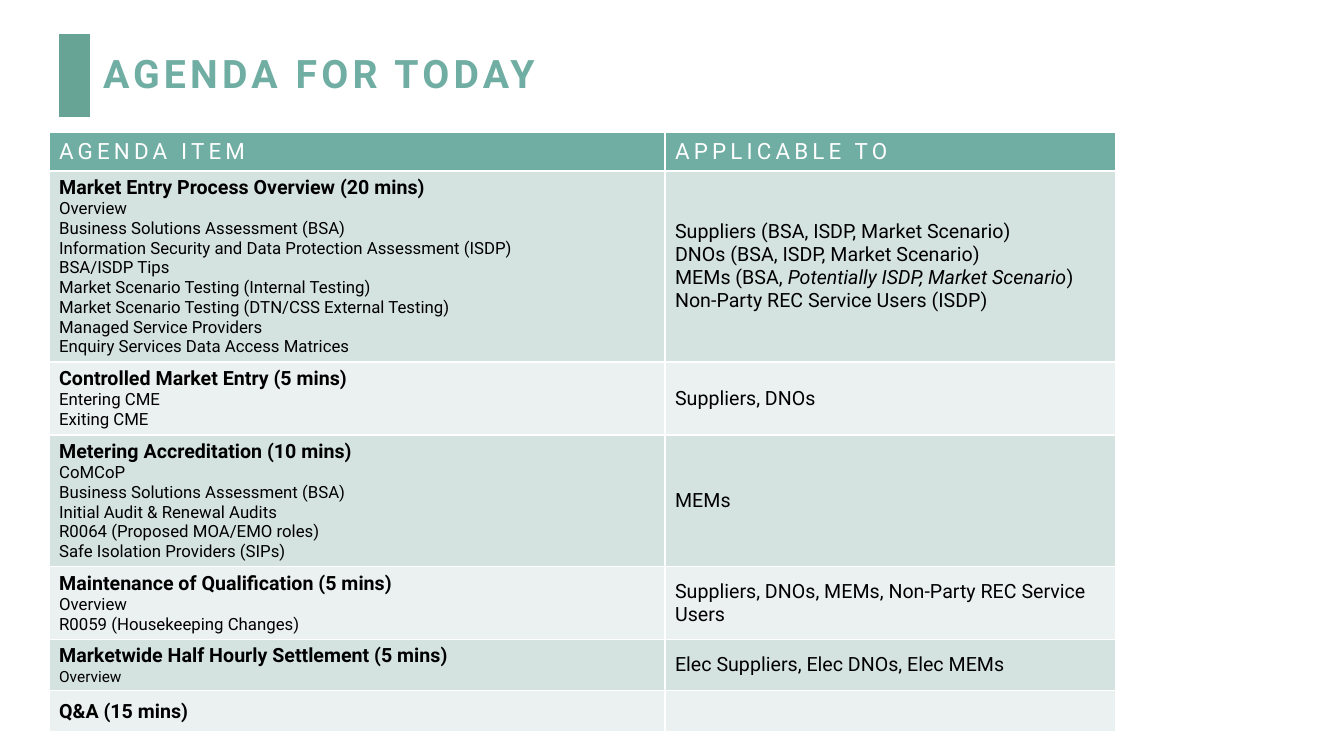
from lxml import etree
from pptx import Presentation
from pptx import util as u
from pptx.dml.color import RGBColor
from pptx.enum import shapes, text
from pptx.oxml import ns

SLIDE_W, SLIDE_H = 1344, 756
SCALE = u.Inches(7.5) / SLIDE_H

TEAL = RGBColor(0x70, 0xAD, 0xA3)
DEEP_TEAL = RGBColor(0x68, 0xA4, 0x95)
BAND_DARK = RGBColor(0xD5, 0xE3, 0xE0)
BAND_LIGHT = RGBColor(0xEB, 0xF1, 0xF0)
WHITE = RGBColor(0xFF, 0xFF, 0xFF)
BLACK = RGBColor(0x00, 0x00, 0x00)

TITLE = {"size": 28, "bold": True, "color": TEAL, "spacing": 3}
HEADER = {"size": 16, "bold": False, "color": WHITE, "spacing": 3}
ITEM = {"size": 14, "bold": True, "color": BLACK}
TOPIC = {"size": 12, "bold": False, "color": BLACK}
SMALL_TOPIC = {**TOPIC, "size": 11}
AUDIENCE = {"size": 14, "bold": False, "color": BLACK}

HEADINGS = ["AGENDA ITEM", "APPLICABLE TO"]
COLUMN_WIDTHS = [616, 451]
HEADER_HEIGHT = 39
AGENDA = [
    (191, "Market Entry Process Overview (20 mins)", TOPIC,
     ["Overview",
      "Business Solutions Assessment (BSA)",
      "Information Security and Data Protection Assessment (ISDP)",
      "BSA/ISDP Tips",
      "Market Scenario Testing (Internal Testing)",
      "Market Scenario Testing (DTN/CSS External Testing)",
      "Managed Service Providers",
      "Enquiry Services Data Access Matrices"],
     ["Suppliers (BSA, ISDP, Market Scenario)",
      "DNOs (BSA, ISDP, Market Scenario)",
      ("MEMs (BSA, ", "Potentially ISDP, Market Scenario", ")"),
      "Non-Party REC Service Users (ISDP)"]),
    (73, "Controlled Market Entry (5 mins)", TOPIC,
     ["Entering CME", "Exiting CME"],
     ["Suppliers, DNOs"]),
    (131, "Metering Accreditation (10 mins)", TOPIC,
     ["CoMCoP",
      "Business Solutions Assessment (BSA)",
      "Initial Audit & Renewal Audits",
      "R0064 (Proposed MOA/EMO roles)",
      "Safe Isolation Providers (SIPs)"],
     ["MEMs"]),
    (73, "Maintenance of Qualification (5 mins)", TOPIC,
     ["Overview", "R0059 (Housekeeping Changes)"],
     ["Suppliers, DNOs, MEMs, Non-Party REC Service Users"]),
    (51, "Marketwide Half Hourly Settlement (5 mins)", SMALL_TOPIC,
     ["Overview"],
     ["Elec Suppliers, Elec DNOs, Elec MEMs"]),
    (41, "Q&A (15 mins)", TOPIC, [], []),
]


def px(length):
    return round(length * SCALE)


def add_run(paragraph, wording, style, italic=False):
    run = paragraph.add_run()
    run.text = wording
    values = {"name": "Roboto", "size": u.Pt(style["size"]),
              "bold": style["bold"], "italic": italic}
    for attribute, value in values.items():
        setattr(run.font, attribute, value)
    run.font.color.rgb = style["color"]
    spacing = style.get("spacing", 0) * 100
    run._r.get_or_add_rPr().set("spc", str(spacing))


def write_lines(frame, lines):
    for index, (line, style) in enumerate(lines):
        paragraph = frame.add_paragraph() if index else frame.paragraphs[0]
        pieces = (line,) if isinstance(line, str) else line
        for position, piece in enumerate(pieces):
            add_run(paragraph, piece, style, italic=position % 2 == 1)


def set_borders(cell):
    properties = cell._tc.get_or_add_tcPr()
    for side in ("a:lnL", "a:lnR", "a:lnT", "a:lnB"):
        border = etree.SubElement(properties, ns.qn(side), w=str(u.Pt(1)))
        fill = etree.SubElement(border, ns.qn("a:solidFill"))
        etree.SubElement(fill, ns.qn("a:srgbClr"), val=str(WHITE))


def fill_cell(cell, lines, color):
    cell.vertical_anchor = text.MSO_ANCHOR.MIDDLE
    set_borders(cell)
    cell.fill.solid()
    cell.fill.fore_color.rgb = color
    write_lines(cell.text_frame, lines)


def add_title(slide, left, top, width, height):
    accent = slide.shapes.add_shape(
        shapes.MSO_SHAPE.RECTANGLE, px(left), px(top), px(31), px(height))
    accent.shadow.inherit = False
    accent.fill.solid()
    accent.fill.fore_color.rgb = DEEP_TEAL
    accent.line.fill.background()

    heading = slide.shapes.title
    box = {"left": left + 34, "top": top + 5,
           "width": width - 34, "height": height - 10}
    for attribute, length in box.items():
        setattr(heading, attribute, px(length))
    frame = heading.text_frame
    layout = {"word_wrap": True, "auto_size": text.MSO_AUTO_SIZE.NONE,
              "vertical_anchor": text.MSO_ANCHOR.MIDDLE}
    for attribute, value in layout.items():
        setattr(frame, attribute, value)
    write_lines(frame, [("AGENDA FOR TODAY", TITLE)])
    frame.paragraphs[0].alignment = text.PP_ALIGN.LEFT
    frame.paragraphs[0].line_spacing = 0.9


def add_agenda(slide, left, top):
    heights = [HEADER_HEIGHT] + [entry[0] for entry in AGENDA]
    agenda = slide.shapes.add_table(
        len(heights), len(COLUMN_WIDTHS), px(left), px(top),
        px(sum(COLUMN_WIDTHS)), px(sum(heights))).table
    for column, width in zip(agenda.columns, COLUMN_WIDTHS):
        column.width = px(width)
    for row, height in zip(agenda.rows, heights):
        row.height = px(height)
    for column, heading in enumerate(HEADINGS):
        fill_cell(agenda.cell(0, column), [(heading, HEADER)], TEAL)
    for row, (_, item, topic_style, topics, audiences) in enumerate(AGENDA, 1):
        band = BAND_DARK if row % 2 else BAND_LIGHT
        item_lines = [(item, ITEM)] + [(topic, topic_style) for topic in topics]
        fill_cell(agenda.cell(row, 0), item_lines, band)
        fill_cell(agenda.cell(row, 1),
                  [(audience, AUDIENCE) for audience in audiences], band)


def main():
    deck = Presentation()
    deck.slide_width, deck.slide_height = px(SLIDE_W), px(SLIDE_H)
    slide = deck.slides.add_slide(deck.slide_layouts[5])
    add_title(slide, 59, 34, 1057, 83)
    add_agenda(slide, 49, 132)
    deck.save("out.pptx")


if __name__ == "__main__":
    main()
